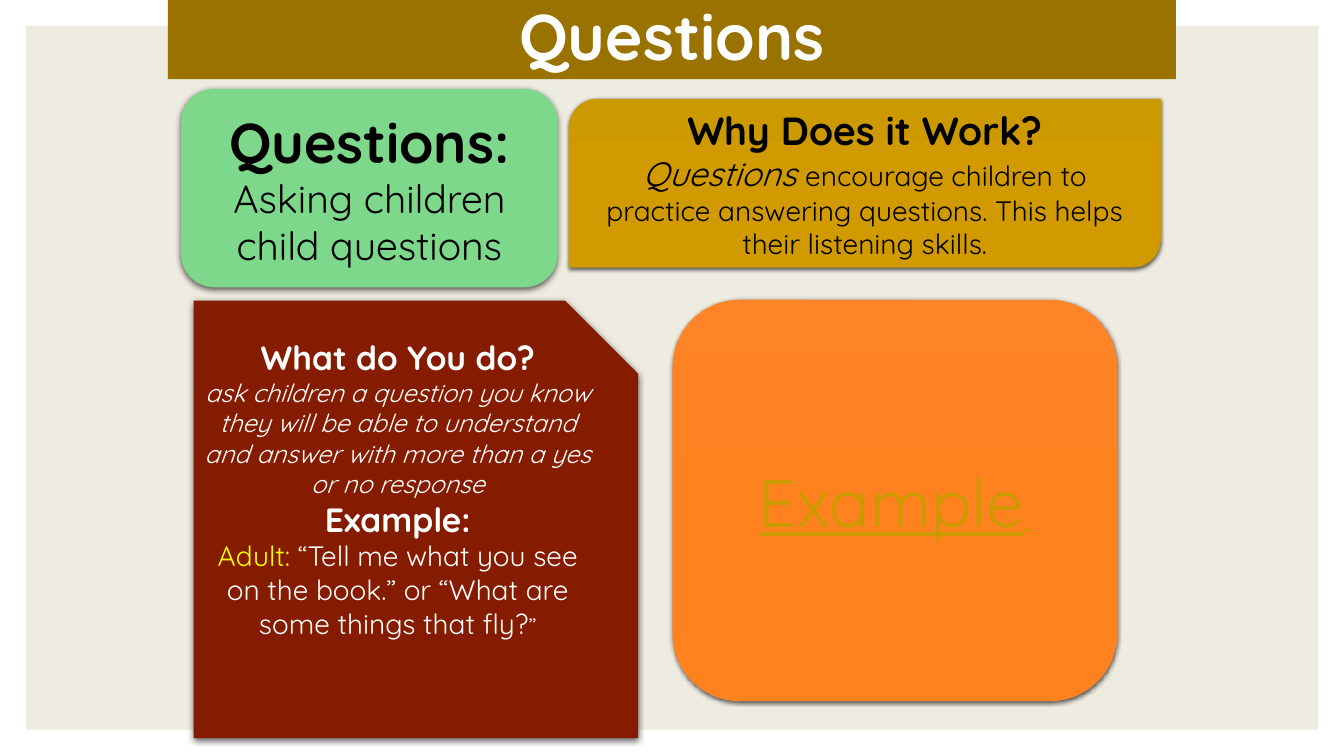
"""Build the slide on asking children questions."""
import pptx
import pptx.util
import pptx.dml.color
import pptx.enum.shapes
import pptx.enum.text
import pptx.oxml.ns
from lxml import etree

Pt = pptx.util.Pt
RGB = pptx.dml.color.RGBColor
SHAPE = pptx.enum.shapes.MSO_SHAPE
ANCHOR = pptx.enum.text.MSO_ANCHOR
qn = pptx.oxml.ns.qn

FONT = "Quicksand"
CREAM = RGB(0xEE, 0xEC, 0xE1)
BRONZE = RGB(0x99, 0x72, 0x00)
GREEN = RGB(0x7E, 0xD8, 0x8C)
MAROON = RGB(0x85, 0x1C, 0x00)
GOLD = RGB(0xCC, 0x99, 0x00)
GOLDS = [GOLD, RGB(0xD0, 0x9A, 0x00), RGB(0xCF, 0x99, 0x00)]
ORANGES = [RGB(0xFF, 0x84, 0x27), RGB(0xFF, 0x82, 0x1F), RGB(0xFF, 0x81, 0x1F)]
BLACK = RGB(0, 0, 0)
WHITE = RGB(0xFF, 0xFF, 0xFF)
YELLOW = RGB(0xFF, 0xFF, 0)

SLIDE_SIZE = (960, 540)
PANEL = (18.72, 18.72, 923.04, 502.56)
TITLE_BAR = (120, 0, 720, 56.6)
TITLE = [[("Questions", 46, WHITE, "b")]]
CORNER = 0.167

CARDS = [
    {"kind": SHAPE.ROUNDED_RECTANGLE, "at": (129.4, 63.5, 268.9, 141.8),
     "corners": [CORNER], "fill": [GREEN], "shadow": (4.5, 1.5),
     "text": [[("Questions:", 40, BLACK, "b")],
              [("Asking children child questions", 28, BLACK, "")]]},
    {"kind": SHAPE.ROUND_2_DIAG_RECTANGLE, "at": (406.6, 71, 422.2, 119.8),
     "corners": [CORNER, 0], "fill": GOLDS, "shadow": (3, 1),
     "text": [[("Why Does it Work?", 28, BLACK, "b")],
              [("Questions ", 24, BLACK, "i"),
               ("encourage children to practice answering questions. "
                "This helps their listening skills.", 20, BLACK, "")]]},
    {"kind": SHAPE.SNIP_1_RECTANGLE, "at": (138.4, 214.8, 317.5, 312.5),
     "corners": [CORNER], "fill": [MAROON], "shadow": (4.5, 1.5), "top": True,
     "text": [[("What do You do?", 24, WHITE, "b")],
              [("ask children a question you know they will be able to understand "
                "and answer with more than a yes or no response", 18, WHITE, "i")],
              [("Example:", 24, WHITE, "b")],
              [("Adult: ", 20, YELLOW, ""),
               ("“Tell me what you see on the book.” or “What are some things "
                "that fly?", 20, WHITE, ""),
               ("”", 16, WHITE, "")]]},
    {"kind": SHAPE.ROUNDED_RECTANGLE, "at": (480.7, 214.5, 317, 286),
     "corners": [CORNER], "fill": ORANGES, "shadow": (3, 1),
     "text": [[("Example", 48, GOLD, "u"), (" ", 18, GOLD, "u")]]},
]


def write(shape, paragraphs, top=False):
    frame = shape.text_frame
    frame.word_wrap = True
    frame.auto_size = pptx.enum.text.MSO_AUTO_SIZE.NONE
    frame.vertical_anchor = ANCHOR.TOP if top else ANCHOR.MIDDLE
    frame.margin_left = frame.margin_right = Pt(7.2)
    frame.margin_top = frame.margin_bottom = Pt(0 if top else 3.6)
    for index, runs in enumerate(paragraphs):
        para = frame.add_paragraph() if index else frame.paragraphs[0]
        para.alignment = pptx.enum.text.PP_ALIGN.CENTER
        for words, size, color, style in runs:
            span = para.add_run()
            span.text = words
            span.font.name = FONT
            span.font.size = Pt(size)
            span.font.color.rgb = color
            span.font.bold = style == "b"
            span.font.italic = style == "i"
            span.font.underline = style == "u"


def paint(shape, colors):
    if len(colors) == 1:
        shape.fill.solid()
        shape.fill.fore_color.rgb = colors[0]
        shape.line.fill.background()
        return
    shape.fill.gradient()
    shape.fill.gradient_angle = 270
    stops = shape.element.spPr.find(".//" + qn("a:gsLst"))
    for stop in list(stops):
        stops.remove(stop)
    for index, color in enumerate(colors):
        position = 100000 * index // (len(colors) - 1)
        stop = etree.SubElement(stops, qn("a:gs"), pos=str(position))
        etree.SubElement(stop, qn("a:srgbClr"), val=str(color))
    shape.line.color.rgb = colors[0]
    shape.line.width = Pt(0.75)


def cast_shadow(shape, blur, distance):
    effects = shape.element.spPr.find(qn("a:effectLst"))
    shadow = etree.SubElement(
        effects, qn("a:outerShdw"), blurRad=str(Pt(blur)), dist=str(Pt(distance)),
        dir="5400000", algn="ctr", rotWithShape="0")
    color = etree.SubElement(shadow, qn("a:srgbClr"), val=str(BLACK))
    etree.SubElement(color, qn("a:alpha"), val="63000")


def add_shape(page, kind, at, colors):
    shape = page.shapes.add_shape(kind, *map(Pt, at))
    shape.shadow.inherit = False
    paint(shape, colors)
    return shape


def add_title(page):
    title = page.shapes.title
    title.left, title.top, title.width, title.height = map(Pt, TITLE_BAR)
    title.fill.solid()
    title.fill.fore_color.rgb = BRONZE
    write(title, TITLE)
    title.text_frame.paragraphs[0].line_spacing = 0.9
    return title


def add_card(page, card):
    shape = add_shape(page, card["kind"], card["at"], card["fill"])
    for index, corner in enumerate(card["corners"]):
        shape.adjustments[index] = corner
    cast_shadow(shape, *card["shadow"])
    write(shape, card["text"], card.get("top", False))


def main():
    deck = pptx.Presentation()
    deck.slide_width, deck.slide_height = map(Pt, SLIDE_SIZE)
    page = deck.slides.add_slide(deck.slide_layouts[5])
    title = add_title(page)
    panel = add_shape(page, SHAPE.RECTANGLE, PANEL, [CREAM])
    title.element.addprevious(panel.element)
    for card in CARDS:
        add_card(page, card)
    deck.save("out.pptx")


if __name__ == "__main__":
    main()
